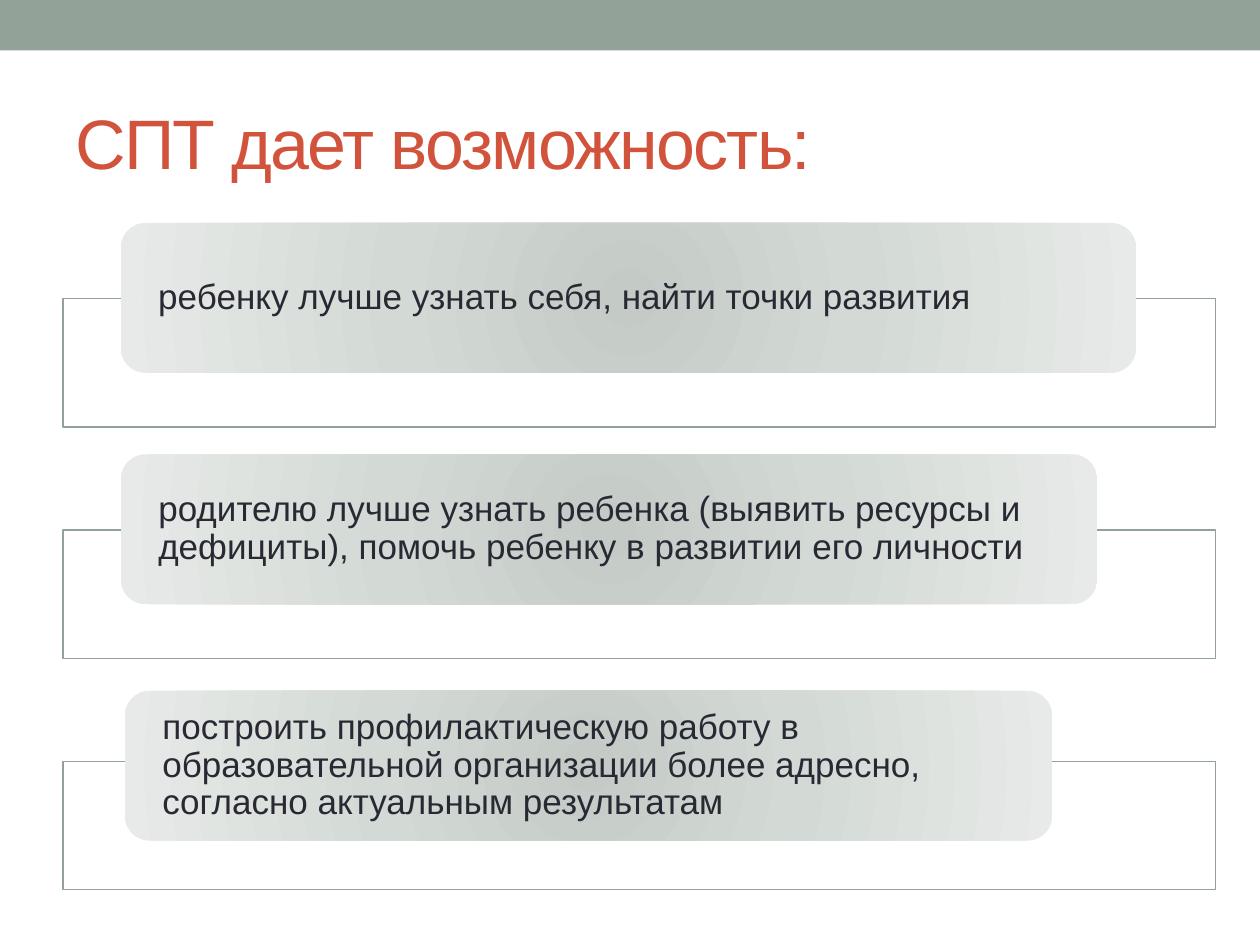
from lxml.etree import SubElement
from pptx import Presentation
from pptx.dml.color import RGBColor
from pptx.enum.shapes import MSO_SHAPE
from pptx.enum.text import MSO_ANCHOR, PP_ALIGN
from pptx.oxml import parse_xml
from pptx.oxml.ns import nsdecls, qn
from pptx.util import Pt

SAGE = "93A299"
GLOW = [(0, "C4CAC6"), (45, "D3DAD6"), (100, "E7EAE8")]
FRAME_HEIGHT = 73.4
PILL_HEIGHT = 85.7
BENEFITS = [
    ("ребенку лучше узнать себя, найти точки развития", 33, -43.2, 580.3),
    ("родителю лучше узнать ребенка (выявить ресурсы и дефициты), "
     "помочь ребенку в развитии его личности", 33, -43.2, 558),
    ("построить профилактическую работу в образовательной организации "
     "более адресно, согласно актуальным результатам", 35.3, -40.3, 530),
]


def color(value):
    return RGBColor.from_string(value)


def add_block(slide, preset, left, top, width, height, fill):
    block = slide.shapes.add_shape(preset, Pt(left), Pt(top), Pt(width), Pt(height))
    block.shadow.inherit = False
    block.fill.solid()
    block.fill.fore_color.rgb = color(fill)
    block.line.fill.background()
    return block


def style_text(paragraph, size, value):
    paragraph.alignment = PP_ALIGN.LEFT
    for run in paragraph.runs:
        run.font.name = "Arial"
        run.font.size = Pt(size)
        run.font.color.rgb = color(value)


def set_radial_gradient(shape):
    stops = "".join(
        f'<a:gs pos="{position * 1000}"><a:srgbClr val="{value}"/></a:gs>'
        for position, value in GLOW
    )
    gradient = parse_xml(
        f'<a:gradFill {nsdecls("a")} rotWithShape="1"><a:gsLst>{stops}</a:gsLst>'
        '<a:path path="circle"><a:fillToRect l="100000" t="100000" '
        'r="100000" b="100000"/></a:path></a:gradFill>'
    )
    properties = shape.element.spPr
    solid = properties.find(qn("a:solidFill"))
    properties.replace(solid, gradient)


def add_heading(slide, left, top, width, height):
    heading = slide.shapes.title
    heading.left, heading.top = Pt(left), Pt(top)
    heading.width, heading.height = Pt(width), Pt(height)
    frame = heading.text_frame
    frame.text = "СПТ дает возможность:"
    frame.vertical_anchor = MSO_ANCHOR.MIDDLE
    style_text(frame.paragraphs[0], 40, "D2533C")
    frame.paragraphs[0].runs[0].font._element.set("spc", "-100")


def add_benefit(slide, left, top, width, text, pill_dx, pill_dy, pill_width):
    frame = add_block(slide, MSO_SHAPE.RECTANGLE, left, top, width, FRAME_HEIGHT, "FFFFFF")
    white = frame.element.spPr.find(qn("a:solidFill"))[0]
    SubElement(white, qn("a:alpha"), val="90000")
    frame.line.color.rgb = color(SAGE)
    frame.line.width = Pt(0.75)

    pill = add_block(slide, MSO_SHAPE.ROUNDED_RECTANGLE, left + pill_dx, top + pill_dy,
                     pill_width, PILL_HEIGHT, GLOW[0][1])
    set_radial_gradient(pill)
    label = pill.text_frame
    label.word_wrap = True
    label.vertical_anchor = MSO_ANCHOR.MIDDLE
    label.margin_left = label.margin_right = Pt(17.3)
    label.margin_top = label.margin_bottom = Pt(0)
    label.text = text
    label.paragraphs[0].line_spacing = 0.9
    style_text(label.paragraphs[0], 20, "292934")


def add_benefits(slide, left, top, width, pitch):
    for index, benefit in enumerate(BENEFITS):
        add_benefit(slide, left, top + index * pitch, width, *benefit)


def main():
    presentation = Presentation()
    presentation.slide_width, presentation.slide_height = Pt(720), Pt(540)
    slide = presentation.slides.add_slide(presentation.slide_layouts[5])
    add_block(slide, MSO_SHAPE.RECTANGLE, 0, 0, 720, 28.8, SAGE)
    add_heading(slide, 36, 41.8, 648, 77.8)
    add_benefits(slide, 36, 170.6, 658.8, 132.2)
    presentation.save("out.pptx")


if __name__ == "__main__":
    main()
